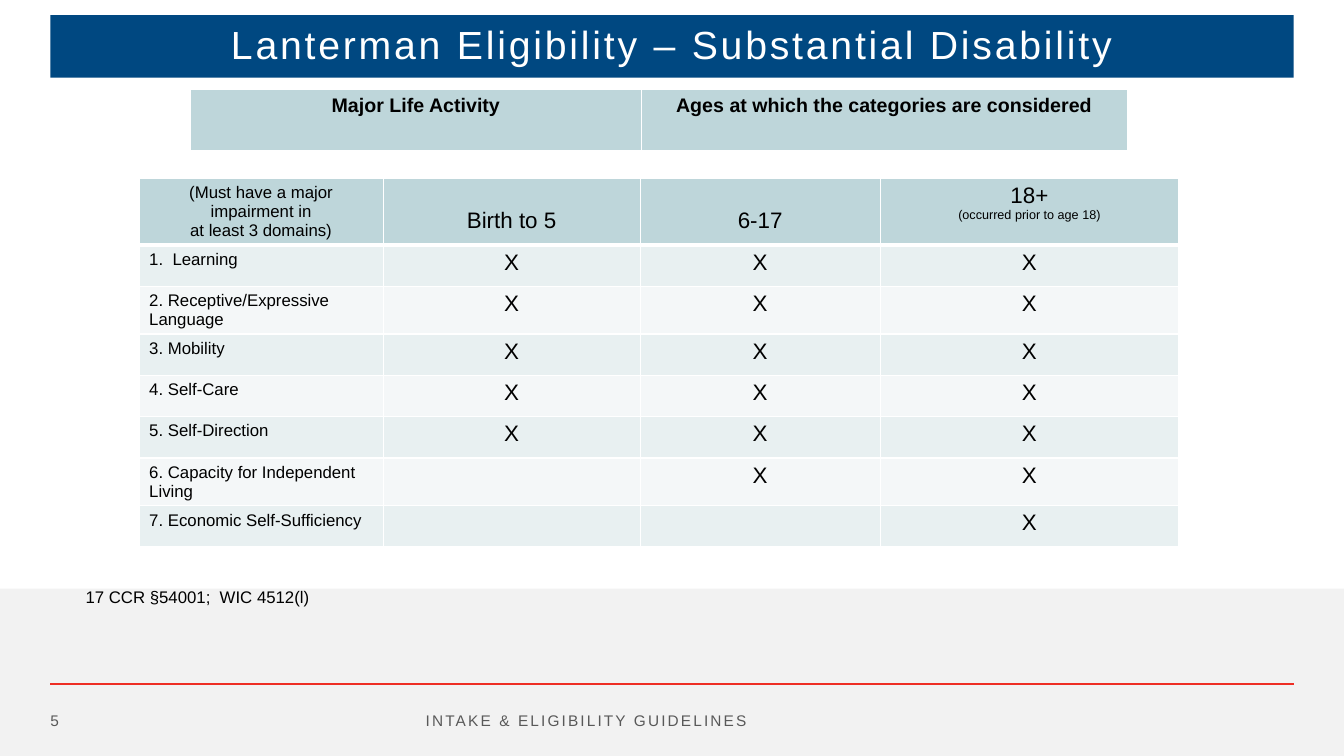
from dataclasses import dataclass

from lxml import etree
from pptx import Presentation
from pptx.dml.color import RGBColor
from pptx.enum.shapes import MSO_CONNECTOR, MSO_SHAPE
from pptx.enum.text import MSO_ANCHOR, MSO_AUTO_SIZE, PP_ALIGN
from pptx.oxml.ns import qn
from pptx.util import Inches, Pt

LEFT, CENTER = PP_ALIGN.LEFT, PP_ALIGN.CENTER
TOP, MIDDLE = MSO_ANCHOR.TOP, MSO_ANCHOR.MIDDLE
NO_AUTOFIT, GROW = MSO_AUTO_SIZE.NONE, MSO_AUTO_SIZE.SHAPE_TO_FIT_TEXT
RECTANGLE, STRAIGHT = MSO_SHAPE.RECTANGLE, MSO_CONNECTOR.STRAIGHT
TITLE_ONLY = 5
FONT = "Arial"
COLORS = {
    "white": "FFFFFF", "black": "000000", "navy": "004881", "red": "EE2E24",
    "band": "F2F2F2", "gray": "595959", "header": "BED6DA",
    "odd": "E8F0F1", "even": "F4F7F8",
}


@dataclass
class Line:
    text: str
    size: float = 16


@dataclass
class Label:
    text: str
    box: tuple[float, float, float, float]
    size: float
    color: str
    align: PP_ALIGN = LEFT
    anchor: MSO_ANCHOR = MIDDLE
    spacing: float = 1.5
    inset: bool = False


@dataclass
class Activity:
    name: str
    marks: tuple[bool, bool, bool] = (True, True, True)


LABELS = [
    Label("INTAKE & ELIGIBILITY GUIDELINES", (1, 6.95, 9.63, 0.4), 11, "gray", CENTER),
    Label("5", (0.5, 6.95, 0.5, 0.4), 11, "gray"),
    Label("17 CCR §54001;  WIC 4512(l)", (0.75, 5.77, 2.84, 0.3), 12, "black",
          anchor=TOP, spacing=0, inset=True),
]
CAPTIONS = ["Major Life Activity", "Ages at which the categories are considered"]
HEADERS = [
    [Line("(Must have a major impairment in", 12), Line("at least 3 domains)", 12)],
    [Line("Birth to 5")],
    [Line("6-17")],
    [Line("18+"), Line("(occurred prior to age 18)", 9)],
]
ACTIVITIES = [
    Activity("1.  Learning"),
    Activity("2. Receptive/Expressive Language"),
    Activity("3. Mobility"),
    Activity("4. Self-Care"),
    Activity("5. Self-Direction"),
    Activity("6. Capacity for Independent Living", (False, True, True)),
    Activity("7. Economic Self-Sufficiency", (False, False, True)),
]


def rgb(name: str) -> RGBColor:
    return RGBColor.from_string(COLORS[name])


def write(tf, lines: list[Line], color: str = "black", align: PP_ALIGN = LEFT,
          bold: bool = False, spacing: float = 0, leading: float | None = None) -> None:
    for i, line in enumerate(lines):
        p = tf.add_paragraph() if i else tf.paragraphs[0]
        p.alignment = align
        if leading:
            p.line_spacing = leading
        r = p.add_run()
        r.text = line.text
        r.font.name = FONT
        r.font.size = Pt(line.size)
        r.font.bold = bold
        r.font.color.rgb = rgb(color)
        if spacing:
            r.font._element.set("spc", str(round(spacing * 100)))


def frame(tf, anchor: MSO_ANCHOR, inset: bool = False) -> None:
    tf.word_wrap = True
    tf.vertical_anchor = anchor
    tf.auto_size = GROW if inset else NO_AUTOFIT
    if not inset:
        tf.margin_left = tf.margin_right = tf.margin_top = tf.margin_bottom = 0


def add_label(s, label: Label) -> None:
    tf = s.shapes.add_textbox(*map(Inches, label.box)).text_frame
    frame(tf, label.anchor, label.inset)
    write(tf, [Line(label.text, label.size)], label.color, label.align,
          spacing=label.spacing)


def style_cell(cell, fill: str, bottom: float = 1) -> None:
    tc_pr = cell._tc.get_or_add_tcPr()
    for side, width in (("L", 1), ("R", 1), ("T", 1), ("B", bottom)):
        ln = etree.SubElement(tc_pr, qn(f"a:ln{side}"), w=str(Pt(width)))
        solid = etree.SubElement(ln, qn("a:solidFill"))
        etree.SubElement(solid, qn("a:srgbClr"), val=COLORS["white"])
    cell.fill.solid()
    cell.fill.fore_color.rgb = rgb(fill)


def add_table(s, left: float, top: float, widths: list[float], heights: list[float]):
    box = (left, top, sum(widths), sum(heights))
    table = s.shapes.add_table(len(heights), len(widths), *map(Inches, box)).table
    for column, width in zip(table.columns, widths):
        column.width = Inches(width)
    for row, height in zip(table.rows, heights):
        row.height = Inches(height)
    return table


def add_title(s) -> None:
    sp = s.shapes.title
    sp.left, sp.top, sp.width, sp.height = map(Inches, (0.5, 0.15, 12.33, 0.62))
    sp.fill.solid()
    sp.fill.fore_color.rgb = rgb("navy")
    frame(sp.text_frame, MIDDLE)
    write(sp.text_frame, [Line("Lanterman Eligibility – Substantial Disability", 28)],
          "white", CENTER, spacing=2, leading=0.9)


def add_footer_band(s) -> None:
    band = s.shapes.add_shape(RECTANGLE, *map(Inches, (0, 5.84, 13.33, 1.66)))
    band.shadow.inherit = False
    band.fill.solid()
    band.fill.fore_color.rgb = rgb("band")
    band.line.fill.background()
    rule = s.shapes.add_connector(STRAIGHT, *map(Inches, (0.5, 6.79, 12.83, 6.79)))
    rule.line.color.rgb = rgb("red")
    rule.line.width = Pt(1.5)
    etree.SubElement(rule._element.spPr, qn("a:effectLst"))


def add_captions(s) -> None:
    table = add_table(s, 1.89, 0.89, [4.47, 4.82], [0.62])
    for cell, caption in zip(table.rows[0].cells, CAPTIONS):
        style_cell(cell, "header", 3)
        write(cell.text_frame, [Line(caption, 14)], align=CENTER, bold=True)


def add_activities(s) -> None:
    heights = [0.48] + [0.41] * len(ACTIVITIES)
    table = add_table(s, 1.38, 1.77, [2.42, 2.55, 2.38, 2.96], heights)
    for cell, lines in zip(table.rows[0].cells, HEADERS):
        style_cell(cell, "header", 3)
        write(cell.text_frame, lines, align=CENTER)
        if len(lines) == 1:
            cell.margin_top = Inches(0.3)
    for i, activity in enumerate(ACTIVITIES, 1):
        name_cell, *mark_cells = table.rows[i].cells
        for cell in (name_cell, *mark_cells):
            style_cell(cell, "odd" if i % 2 else "even")
        write(name_cell.text_frame, [Line(activity.name, 12)])
        for cell, marked in zip(mark_cells, activity.marks):
            if marked:
                write(cell.text_frame, [Line("X")], align=CENTER)


def main() -> None:
    prs = Presentation()
    prs.slide_width, prs.slide_height = Inches(13.33), Inches(7.5)
    s = prs.slides.add_slide(prs.slide_layouts[TITLE_ONLY])
    add_footer_band(s)
    add_title(s)
    add_captions(s)
    add_activities(s)
    for label in LABELS:
        add_label(s, label)
    prs.save("out.pptx")


if __name__ == "__main__":
    main()
